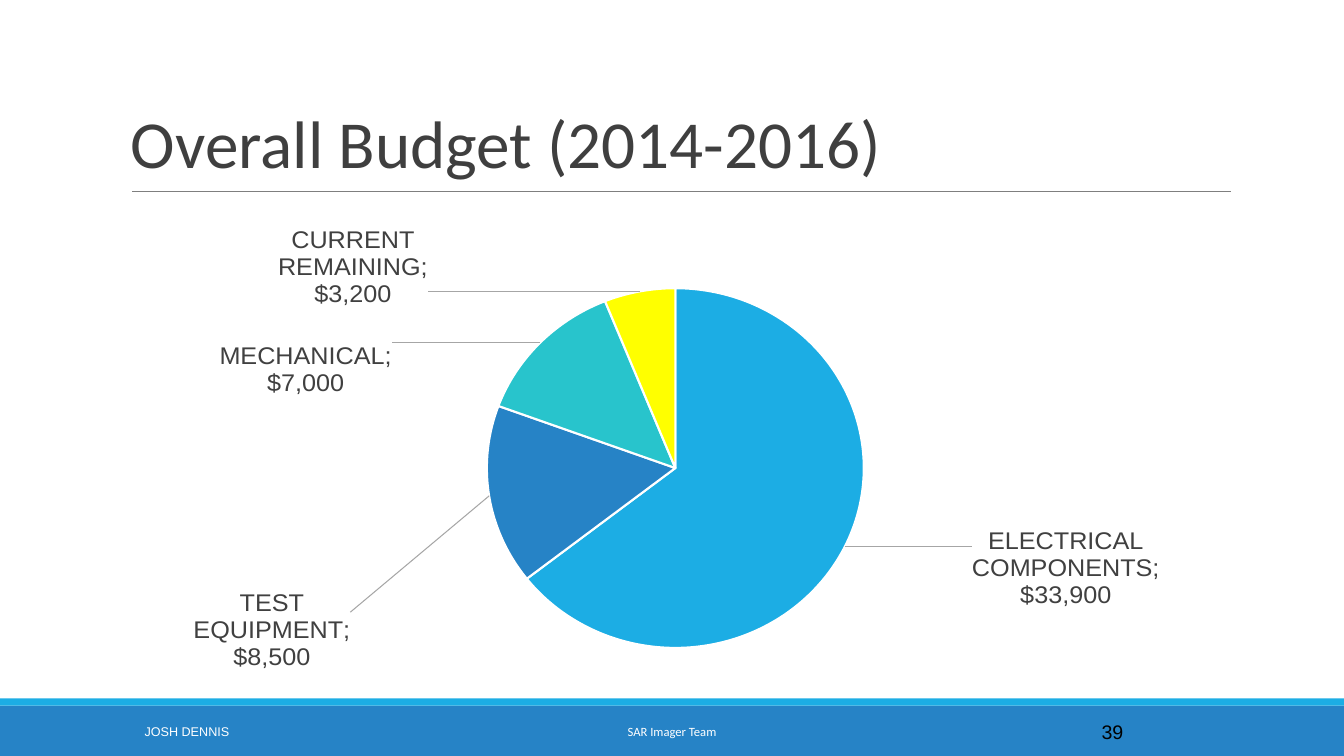
"""Builds the overall budget slide with its pie chart."""
import lxml.etree
import pptx
import pptx.chart.data
import pptx.dml.color
import pptx.enum.chart
import pptx.enum.shapes
import pptx.enum.text
import pptx.oxml.ns
import pptx.oxml.xmlchemy
import pptx.util

Cm, Pt = pptx.util.Cm, pptx.util.Pt
ALIGN = pptx.enum.text.PP_ALIGN
ANCHOR = pptx.enum.text.MSO_ANCHOR
qn = pptx.oxml.ns.qn
new_element = pptx.oxml.xmlchemy.OxmlElement

COLOURS = {
    "sky": "1CADE4", "blue": "2683C6", "teal": "28C4CC", "yellow": "FFFF00",
    "white": "FFFFFF", "black": "000000", "title": "3F3F3F",
    "label": "404040", "rule": "7F7F7F", "leader": "A6A6A6",
}
WIDTH, HEIGHT = 33.87, 19.05
BANDS = [("blue", 17.78, 1.27), ("sky", 17.6, 0.18)]
FOOTER_TOP, FOOTER_HEIGHT = 17.93, 1.02
MONEY = '"$"#,##0'
SLICES = [
    ("ELECTRICAL COMPONENTS", 33900, "sky", (0.11, -0.05)),
    ("TEST EQUIPMENT", 8500, "blue", (-0.12, 0.26)),
    ("MECHANICAL", 7000, "teal", (-0.13, 0.13)),
    ("CURRENT REMAINING", 3200, "yellow", (-0.19, 0.04)),
]
PLOT_AREA = {"x": 0.33, "y": 0.14, "w": 0.34, "h": 0.81}
TITLE = ("Overall Budget (2014-2016)", (3.05, 0.79, 27.94, 4.04),
         "Calibri", 48, "title", ALIGN.LEFT, ANCHOR.BOTTOM)
FOOTERS = [
    ("JOSH DENNIS", 1.47, 6.48, "Arial", 9, "white", ALIGN.CENTER),
    ("SAR Imager Team", 10.24, 13.39, "Calibri", 9, "white", ALIGN.CENTER),
    ("39", 27.51, 3.63, "Arial", 14, "black", ALIGN.LEFT),
]


def colour(name):
    return pptx.dml.color.RGBColor.from_string(COLOURS[name])


def set_font(font, face, size, shade):
    font.name, font.size = face, Pt(size)
    font.color.rgb = colour(shade)


def add_text(page, text, place, face, size, shade, align, anchor):
    box = page.shapes.add_textbox(*map(Cm, place))
    frame = box.text_frame
    frame.word_wrap = True
    frame.vertical_anchor = anchor
    frame.margin_left = frame.margin_right = Cm(0.25)
    frame.margin_top = frame.margin_bottom = Cm(0.25 if size > 20 else 0.13)
    para = frame.paragraphs[0]
    para.text = text
    para.alignment = align
    set_font(para.font, face, size, shade)
    return para


def manual_layout(values, inner=False):
    layout = new_element("c:layout")
    manual = lxml.etree.SubElement(layout, qn("c:manualLayout"))
    settings = {}
    if inner:
        settings = {"layoutTarget": "inner", "xMode": "edge", "yMode": "edge"}
    for tag, value in {**settings, **values}.items():
        lxml.etree.SubElement(manual, qn(f"c:{tag}")).set("val", str(value))
    return layout


def add_bands(page):
    for shade, top, height in BANDS:
        band = page.shapes.add_shape(
            pptx.enum.shapes.MSO_SHAPE.RECTANGLE, 0, Cm(top), Cm(WIDTH), Cm(height))
        band.shadow.inherit = False
        band.fill.solid()
        band.fill.fore_color.rgb = colour(shade)
        band.line.fill.background()


def add_rule(page):
    rule = page.shapes.add_connector(
        pptx.enum.shapes.MSO_CONNECTOR.STRAIGHT, Cm(3.33), Cm(4.83), Cm(31.01), Cm(4.83))
    rule.line.color.rgb = colour("rule")
    rule.line.width = Pt(0.75)
    lxml.etree.SubElement(rule.element.spPr, qn("a:effectLst"))


def style_labels(labels):
    labels.show_value = labels.show_category_name = True
    labels.number_format, labels.number_format_is_linked = MONEY, False
    labels.position = pptx.enum.chart.XL_LABEL_POSITION.OUTSIDE_END
    set_font(labels.font, "Arial", 18, "label")


def add_leader_lines(series_labels):
    for old in series_labels.xpath("c:showLeaderLines | c:leaderLines"):
        series_labels.remove(old)
    lxml.etree.SubElement(series_labels, qn("c:showLeaderLines")).set("val", "1")
    leaders = lxml.etree.SubElement(series_labels, qn("c:leaderLines"))
    look = lxml.etree.SubElement(leaders, qn("c:spPr"))
    line = lxml.etree.SubElement(look, qn("a:ln"), w="9525")
    fill = lxml.etree.SubElement(line, qn("a:solidFill"))
    lxml.etree.SubElement(fill, qn("a:srgbClr"), val=COLOURS["leader"])


def add_budget_pie(page):
    budget = pptx.chart.data.CategoryChartData(number_format=MONEY)
    budget.categories = [name for name, *_ in SLICES]
    budget.add_series("Series 1", [amount for _, amount, *_ in SLICES])
    chart = page.shapes.add_chart(
        pptx.enum.chart.XL_CHART_TYPE.PIE,
        Cm(3.05), Cm(5.16), Cm(27.94), Cm(11.73), budget).chart
    chart.has_title = chart.has_legend = False
    set_font(chart.font, "Arial", 18, "black")
    plot = chart.plots[0]
    plot.vary_by_categories = True
    series = plot.series[0]
    style_labels(series.data_labels)
    for index, (_, _, shade, _) in enumerate(SLICES):
        point = series.points[index]
        point.format.fill.solid()
        point.format.fill.fore_color.rgb = colour(shade)
        point.format.line.color.rgb = colour("white")
        point.format.line.width = Pt(1.5)
        set_font(point.data_label.font, "Arial", 18, "label")
        point.data_label.position = pptx.enum.chart.XL_LABEL_POSITION.OUTSIDE_END
    series_labels = series.data_labels._element
    for label, (*_, (shift_x, shift_y)) in zip(series_labels.xpath("c:dLbl"), SLICES):
        money = new_element("c:numFmt")
        money.set("formatCode", MONEY)
        money.set("sourceLinked", "0")
        label.insert(1, manual_layout({"x": shift_x, "y": shift_y}))
        label.insert(2, money)
        for flag in label.xpath("c:showVal | c:showCatName"):
            flag.set("val", "1")
    add_leader_lines(series_labels)
    area = chart.element.xpath("c:chart/c:plotArea")[0]
    for old in area.xpath("c:layout"):
        area.remove(old)
    area.insert(0, manual_layout(PLOT_AREA, inner=True))


def main():
    deck = pptx.Presentation()
    deck.slide_width, deck.slide_height = Cm(WIDTH), Cm(HEIGHT)
    page = deck.slides.add_slide(deck.slide_layouts[6])
    add_bands(page)
    add_rule(page)
    add_text(page, *TITLE).line_spacing = 0.85
    add_budget_pie(page)
    for text, left, width, *style in FOOTERS:
        place = (left, FOOTER_TOP, width, FOOTER_HEIGHT)
        add_text(page, text, place, *style, ANCHOR.MIDDLE)
    deck.save("out.pptx")


if __name__ == "__main__":
    main()
